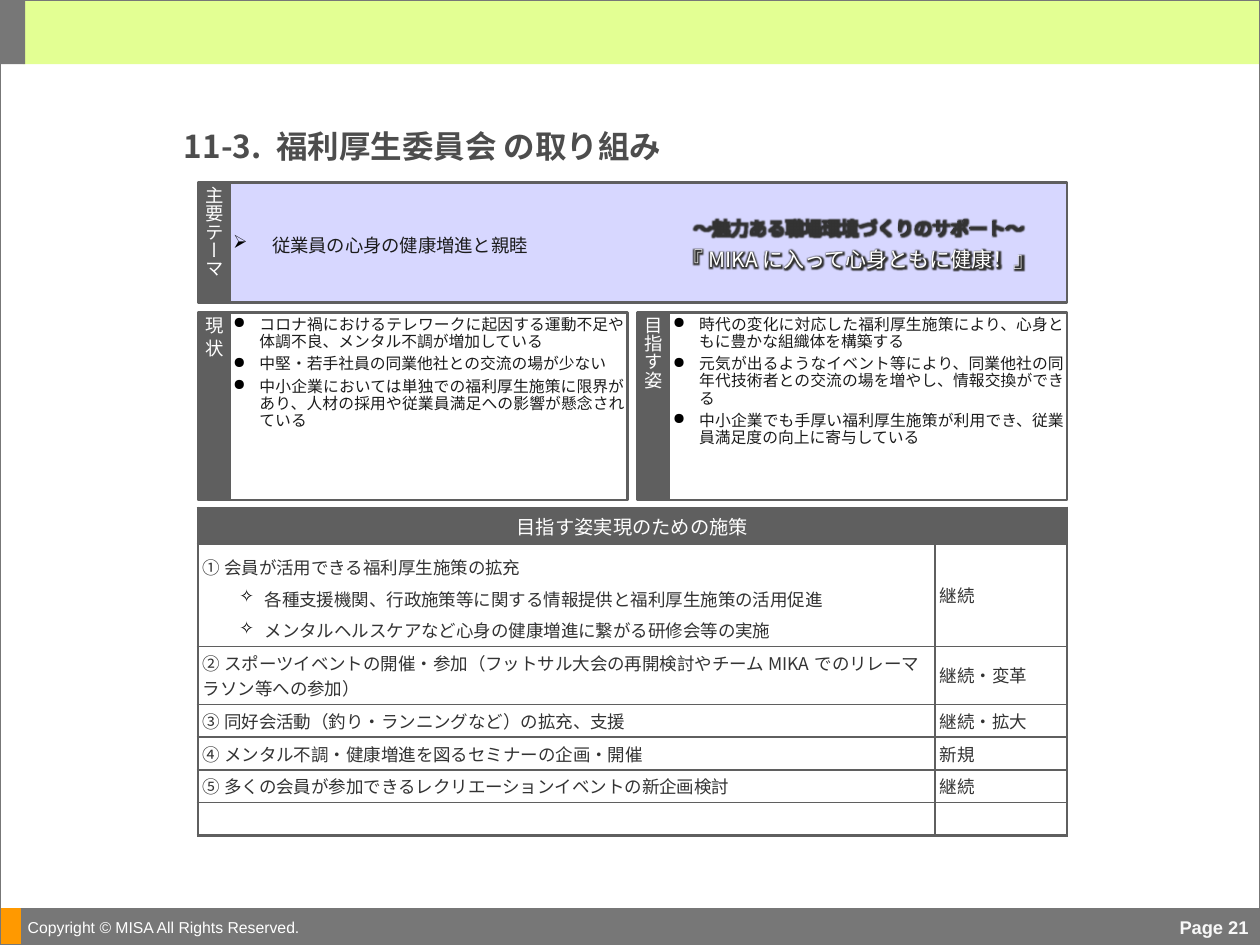
from dataclasses import dataclass
from typing import Optional

from lxml.etree import SubElement
from pptx import Presentation
from pptx.dml.color import RGBColor
from pptx.enum.shapes import MSO_SHAPE
from pptx.enum.text import MSO_ANCHOR, MSO_AUTO_SIZE, PP_ALIGN
from pptx.oxml import parse_xml
from pptx.oxml.ns import nsdecls, qn
from pptx.util import Inches, Pt

JP = "Noto Sans CJK JP"
DARK, GREY, INK, TEXT, WHITE = "5F5F5F", "777777", "1C1C1C", "333333", "FFFFFF"
LABEL_W = 0.25
LEFT, RIGHT = 1.57, 5.06


@dataclass
class Box:
    x: float
    y: float
    w: float
    h: float
    fill: Optional[str] = None
    line: Optional[str] = None
    line_w: float = 0.75


@dataclass
class Para:
    text: str
    size: float
    color: str
    align: PP_ALIGN = PP_ALIGN.LEFT
    bullet: str = ""
    margin: float = 0
    hang: float = 0
    spacing: Optional[float] = None
    before: float = 0
    after: float = 0
    font: str = JP
    bold: bool = False
    glow: bool = False


@dataclass
class Panel:
    box: Box
    label: str
    items: tuple[str, ...] = ()


@dataclass
class Measure:
    lines: tuple[str, ...]
    status: str
    height: float = 0.26


def rgb(color: str) -> RGBColor:
    return RGBColor.from_string(color)


def draw_box(s, b: Box):
    sp = s.shapes.add_shape(MSO_SHAPE.RECTANGLE, Inches(b.x), Inches(b.y), Inches(b.w), Inches(b.h))
    sp.shadow.inherit = False
    if b.fill:
        sp.fill.solid()
        sp.fill.fore_color.rgb = rgb(b.fill)
    else:
        sp.fill.background()
    if b.line:
        sp.line.color.rgb = rgb(b.line)
        sp.line.width = Pt(b.line_w)
    else:
        sp.line.fill.background()
    return sp


def format_para(p, item: Para) -> None:
    p.text = item.text
    p.alignment = item.align
    if item.bullet:
        pPr = p._p.get_or_add_pPr()
        pPr.set("marL", str(Inches(item.margin)))
        pPr.set("indent", str(-Inches(item.hang)))
        clr = SubElement(pPr, qn("a:buClr"))
        SubElement(clr, qn("a:srgbClr"), val="000000")
        SubElement(pPr, qn("a:buChar"), char=item.bullet)
    if item.spacing:
        p.line_spacing = Pt(item.spacing)
    p.space_before, p.space_after = Pt(item.before), Pt(item.after)
    for r in p.runs:
        r.font.size, r.font.bold, r.font.name = Pt(item.size), item.bold, item.font
        r.font.color.rgb = rgb(item.color)
        rPr = r._r.get_or_add_rPr()
        rPr.find(qn("a:latin")).addnext(parse_xml(f'<a:ea {nsdecls("a")} typeface="{item.font}"/>'))
        if item.glow:
            rPr.find(qn("a:solidFill")).addnext(parse_xml(
                f'<a:effectLst {nsdecls("a")}><a:glow rad="63500">'
                f'<a:srgbClr val="{TEXT}"/></a:glow></a:effectLst>'))


def fill_text(tf, paras: list[Para], insets=(0.03, 0.03, 0.03, 0.03),
              anchor=MSO_ANCHOR.MIDDLE, wrap: bool = True) -> None:
    tf.word_wrap = wrap
    tf.auto_size = MSO_AUTO_SIZE.NONE
    tf.vertical_anchor = anchor
    tf.margin_left, tf.margin_top, tf.margin_right, tf.margin_bottom = map(Inches, insets)
    for i, item in enumerate(paras):
        format_para(tf.paragraphs[0] if i == 0 else tf.add_paragraph(), item)


def draw_text(s, x: float, y: float, w: float, h: float, paras: list[Para], insets, wrap=True) -> None:
    sp = s.shapes.add_textbox(Inches(x), Inches(y), Inches(w), Inches(h))
    fill_text(sp.text_frame, paras, insets, wrap=wrap)


def draw_panel(s, panel: Panel) -> None:
    b = panel.box
    body = draw_box(s, Box(b.x + LABEL_W, b.y, b.w - LABEL_W, b.h, b.fill, DARK, 1.5))
    label = draw_box(s, Box(b.x, b.y, LABEL_W, b.h, DARK, DARK, 1.5))
    fill_text(label.text_frame, [Para(panel.label, 10.5, WHITE, PP_ALIGN.CENTER)])
    label.text_frame._txBody.bodyPr.set("vert", "eaVert")
    if panel.items:
        fill_text(body.text_frame, [
            Para(t, 9, INK, PP_ALIGN.JUSTIFY, "●", 0.21, 0.21, 9.8, after=3) for t in panel.items
        ], anchor=MSO_ANCHOR.TOP)


def format_cell(cell, paras: list[Para], borders: dict[str, float], fill: Optional[str] = None) -> None:
    cell.vertical_anchor = MSO_ANCHOR.MIDDLE
    cell.margin_left = cell.margin_right = Inches(0.04)
    cell.margin_top = cell.margin_bottom = Inches(0.03)
    tcPr = cell._tc.get_or_add_tcPr()
    for side in "LRTB":
        ln = SubElement(tcPr, qn(f"a:ln{side}"), w=str(Pt(borders[side])))
        SubElement(SubElement(ln, qn("a:solidFill")), qn("a:srgbClr"), val=DARK)
    if fill:
        cell.fill.solid()
        cell.fill.fore_color.rgb = rgb(fill)
    else:
        cell.fill.background()
    tf = cell.text_frame
    for i, item in enumerate(paras):
        p = tf.paragraphs[0] if i == 0 else tf.add_paragraph()
        format_para(p, item)
        if not item.text:
            SubElement(p._p, qn("a:endParaRPr"), sz=str(int(item.size * 100)))


def draw_measures(s, title: str, measures: list[Measure]) -> None:
    heights = [0.29] + [m.height for m in measures]
    widths = [5.85, 1.05]
    table = s.shapes.add_table(len(heights), 2, Inches(LEFT), Inches(4.03),
                               Inches(sum(widths)), Inches(sum(heights))).table
    table.first_row = table.horz_banding = False
    for col, w in zip(table.columns, widths):
        col.width = Inches(w)
    for row, h in zip(table.rows, heights):
        row.height = Inches(h)
    table.cell(0, 0).merge(table.cell(0, 1))
    for c in range(2):
        paras = [Para(title, 11, WHITE, PP_ALIGN.CENTER)] if c == 0 else []
        format_cell(table.cell(0, c), paras, dict.fromkeys("LRTB", 1.5), DARK)
    for i, m in enumerate(measures, 1):
        edges = {"T": 1.5 if i == 1 else 1, "B": 1.5 if i == len(measures) else 1}
        spacing = 18 if len(m.lines) > 1 else None
        paras = [Para(m.lines[0], 10, TEXT, spacing=spacing)]
        paras += [Para(t, 10, TEXT, PP_ALIGN.JUSTIFY, "✧", 0.49, 0.2, 18) for t in m.lines[1:]]
        format_cell(table.cell(i, 0), paras, {"L": 1.5, "R": 1, **edges})
        format_cell(table.cell(i, 1), [Para(m.status, 10, TEXT)], {"L": 1, "R": 1.5, **edges})


def main() -> None:
    prs = Presentation()
    prs.slide_width, prs.slide_height = Inches(10), Inches(7.5)
    s = prs.slides.add_slide(prs.slide_layouts[5])
    for b in (Box(0.18, 0, 9.82, 0.51, "E3FF93"), Box(0.16, 7.21, 9.84, 0.29, GREY, GREY),
              Box(0, 7.21, 0.16, 0.29, "FF9900", "FF9900"), Box(0, 0, 0.2, 0.51, GREY),
              Box(0, 0, 10, 7.5, None, GREY)):
        draw_box(s, b)
    draw_text(s, 0.14, 7.22, 3.25, 0.28, [Para("Copyright © MISA All Rights Reserved.", 9, WHITE, font="Arial")],
              (0.08, 0, 0, 0), wrap=False)
    draw_text(s, 7.62, 7.22, 2.33, 0.28,
              [Para("Page 21", 10.5, "F8F8F8", PP_ALIGN.RIGHT, font="Arial", bold=True)], (0.04, 0, 0.04, 0))

    title = s.shapes.title
    title.left, title.top, title.width, title.height = map(Inches, (1.4, 0.94, 6.09, 0.38))
    fill_text(title.text_frame, [Para("11-3. 福利厚生委員会 の取り組み", 18, "4D4D4D", bold=True)], (0.06, 0.06, 0, 0))

    for panel in (
        Panel(Box(LEFT, 1.45, 6.9, 0.95, "D7D7FF"), "主要テーマ"),
        Panel(Box(LEFT, 2.48, 3.41, 1.49), "現 状", (
            "コロナ禍におけるテレワークに起因する運動不足や体調不良、メンタル不調が増加している",
            "中堅・若手社員の同業他社との交流の場が少ない",
            "中小企業においては単独での福利厚生施策に限界があり、人材の採用や従業員満足への影響が懸念されている")),
        Panel(Box(RIGHT, 2.48, 3.41, 1.49), "目指す姿", (
            "時代の変化に対応した福利厚生施策により、心身ともに豊かな組織体を構築する",
            "元気が出るようなイベント等により、同業他社の同年代技術者との交流の場を増やし、情報交換ができる",
            "中小企業でも手厚い福利厚生施策が利用でき、従業員満足度の向上に寄与している")),
    ):
        draw_panel(s, panel)
    theme_insets = (0.03, 0.06, 0.03, 0.03)
    draw_text(s, 5.24, 1.45, 3.15, 0.95, [
        Para("～魅力ある職場環境づくりのサポート～", 10.5, TEXT, PP_ALIGN.CENTER, glow=True),
        Para("『MIKAに入って心身ともに健康！』", 12, WHITE, PP_ALIGN.CENTER, before=4.5, glow=True),
    ], theme_insets)
    draw_text(s, 1.82, 1.45, 3.42, 0.95, [
        Para("従業員の心身の健康増進と親睦", 10.5, INK, bullet="➢", margin=0.31, hang=0.31, spacing=12.8, after=2.2),
    ], theme_insets)

    draw_measures(s, "目指す姿実現のための施策", [
        Measure(("① 会員が活用できる福利厚生施策の拡充",
                 "各種支援機関、行政施策等に関する情報提供と福利厚生施策の活用促進",
                 "メンタルヘルスケアなど心身の健康増進に繋がる研修会等の実施"), "継続", 0.8),
        Measure(("② スポーツイベントの開催・参加（フットサル大会の再開検討やチームMIKAでのリレーマラソン等への参加）",),
                "継続・変革", 0.46),
        Measure(("③ 同好会活動（釣り・ランニングなど）の拡充、支援",), "継続・拡大"),
        Measure(("④ メンタル不調・健康増進を図るセミナーの企画・開催",), "新規"),
        Measure(("⑤ 多くの会員が参加できるレクリエーションイベントの新企画検討",), "継続"),
        Measure(("",), ""),
    ])
    prs.save("out.pptx")


if __name__ == "__main__":
    main()
